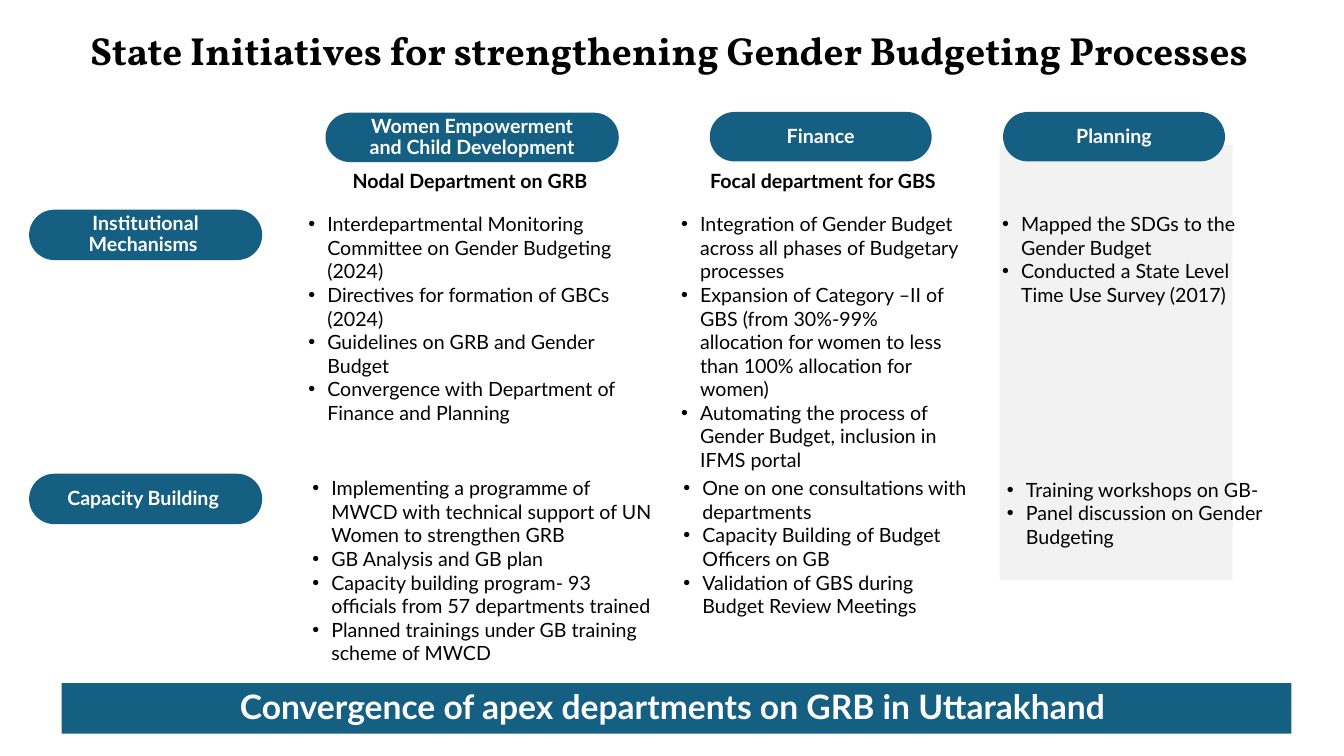
"""Build the slide on state initiatives for gender budgeting."""
import dataclasses
import typing

import lxml.etree
import pptx
import pptx.dml.color
import pptx.enum.shapes
import pptx.enum.text
import pptx.oxml.ns
import pptx.util

Pt = pptx.util.Pt
Shapes = pptx.enum.shapes.MSO_SHAPE
Align = pptx.enum.text.PP_ALIGN
Anchor = pptx.enum.text.MSO_ANCHOR

BLUE, GREY, BLACK, WHITE = "156082", "F2F2F2", "000000", "FFFFFF"
BULLET_INDENT = 13.5


@dataclasses.dataclass(frozen=True)
class Box:
    left: float
    top: float
    width: float
    height: float


@dataclasses.dataclass(frozen=True)
class Block:
    box: Box
    text: str


TITLE = Block(Box(21, 15, 919, 41), "State Initiatives for strengthening Gender Budgeting Processes ")
BANNER = Block(Box(44, 488, 878.5, 36), "Convergence of apex departments on GRB in Uttarakhand ")
PLANNING_PANEL = Box(714, 103.5, 166.5, 310.5)

PILLS = [
    Block(Box(232.5, 80.5, 209.5, 35.3), "Women Empowerment and Child Development"),
    Block(Box(507, 80, 158.5, 35.3), "Finance"),
    Block(Box(716.5, 80, 158.5, 35.3), "Planning"),
    Block(Box(20.8, 149.8, 166.5, 36), "Institutional Mechanisms "),
    Block(Box(20.8, 338.4, 166.5, 36), "Capacity Building "),
]

ROLES = [
    Block(Box(238, 119, 195.5, 18), "Nodal Department on GRB"),
    Block(Box(501, 119, 174, 18), "Focal department for GBS"),
]

PLACEHOLDER_LISTS = [
    Block(Box(216.7, 149.8, 258.5, 171.5),
          "Interdepartmental Monitoring Committee on Gender Budgeting (2024)\n"
          "Directives for formation of GBCs (2024)\n"
          "Guidelines on GRB and Gender Budget\n"
          "Convergence with Department of Finance and Planning"),
    Block(Box(219.6, 338.4, 255.6, 155),
          "Implementing a programme of MWCD with technical support of UN Women to strengthen GRB\n"
          "GB Analysis and GB plan\n"
          "Capacity building program- 93 officials from 57 departments trained\n"
          "Planned trainings under GB training scheme of MWCD"),
    Block(Box(483, 149.8, 209.5, 182),
          "Integration of Gender Budget across all phases of Budgetary processes\n"
          "Expansion of Category –II of GBS (from 30%-99% allocation for women "
          "to less than 100% allocation for women)\n"
          "Automating the process of Gender Budget, inclusion in IFMS portal"),
    Block(Box(484.6, 338.4, 209.5, 119),
          "One on one consultations with departments\n"
          "Capacity Building of Budget Officers on GB\n"
          "Validation of GBS during Budget Review Meetings"),
]

PLANNING_LISTS = [
    Block(Box(712.3, 149.8, 199.5, 157.5),
          "Mapped the SDGs to the Gender Budget\nConducted a State Level Time Use Survey (2017)"),
    Block(Box(715.7, 339.4, 215, 54),
          "Training workshops on GB-\nPanel discussion on Gender Budgeting"),
]


def color(hex_code: str) -> pptx.dml.color.RGBColor:
    return pptx.dml.color.RGBColor.from_string(hex_code)


def add_bullet(paragraph: typing.Any) -> None:
    properties = paragraph._p.get_or_add_pPr()
    properties.set("marL", str(Pt(BULLET_INDENT)))
    properties.set("indent", str(-Pt(BULLET_INDENT)))
    for tag, name, value in (("a:buFont", "typeface", "Arial"), ("a:buChar", "char", "•")):
        lxml.etree.SubElement(properties, pptx.oxml.ns.qn(tag)).set(name, value)


def write_text(shape: typing.Any, text: str, *, size: float = 14, font: str = "Lato",
               hex_code: str = BLACK, bold: bool = False, align: Align = Align.CENTER,
               anchor: Anchor = Anchor.TOP, spacing: float = 1.0,
               side_inset: float = 3.6, top_inset: float = 1.8, bullets: bool = False) -> None:
    frame = shape.text_frame
    frame.text = text
    frame.word_wrap = True
    frame.auto_size = pptx.enum.text.MSO_AUTO_SIZE.NONE
    frame.vertical_anchor = anchor
    frame.margin_left = frame.margin_right = Pt(side_inset)
    frame.margin_top = frame.margin_bottom = Pt(top_inset)
    for paragraph in frame.paragraphs:
        paragraph.alignment = align
        paragraph.line_spacing = spacing
        paragraph.space_before = paragraph.space_after = Pt(0)
        if bullets:
            add_bullet(paragraph)
        for run in paragraph.runs:
            run.font.name = font
            run.font.size = Pt(size)
            run.font.bold = bold
            run.font.color.rgb = color(hex_code)


def place(shape: typing.Any, box: Box) -> None:
    shape.left, shape.top = Pt(box.left), Pt(box.top)
    shape.width, shape.height = Pt(box.width), Pt(box.height)


def add_textbox(slide: typing.Any, box: Box) -> typing.Any:
    return slide.shapes.add_textbox(Pt(box.left), Pt(box.top), Pt(box.width), Pt(box.height))


def add_filled(slide: typing.Any, kind: Shapes, box: Box, fill: str) -> typing.Any:
    shape = slide.shapes.add_shape(kind, Pt(box.left), Pt(box.top), Pt(box.width), Pt(box.height))
    shape.fill.solid()
    shape.fill.fore_color.rgb = color(fill)
    shape.line.fill.background()
    shape.shadow.inherit = False
    return shape


def add_pill(slide: typing.Any, pill: Block) -> None:
    shape = add_filled(slide, Shapes.ROUNDED_RECTANGLE, pill.box, BLUE)
    shape.adjustments[0] = 0.5
    write_text(shape, pill.text, hex_code=WHITE, bold=True, anchor=Anchor.MIDDLE,
               spacing=0.9, side_inset=18)


def write_list(shape: typing.Any, text: str) -> None:
    write_text(shape, text, align=Align.LEFT, bullets=True)


def main() -> None:
    presentation = pptx.Presentation()
    presentation.slide_width, presentation.slide_height = Pt(960), Pt(540)
    slide = presentation.slides.add_slide(presentation.slide_layouts.get_by_name("Comparison"))

    title = slide.shapes.title
    place(title, TITLE.box)
    write_text(title, TITLE.text, size=28, font="Vollkorn", bold=True,
               side_inset=7.2, top_inset=3.6)

    bodies = [shape for shape in slide.placeholders if shape.placeholder_format.idx in range(1, 5)]
    for body, block in zip(bodies, PLACEHOLDER_LISTS):
        place(body, block.box)
        write_list(body, block.text)

    add_filled(slide, Shapes.RECTANGLE, PLANNING_PANEL, GREY)
    for block in PLANNING_LISTS:
        write_list(add_textbox(slide, block.box), block.text)
    for role in ROLES:
        write_text(add_textbox(slide, role.box), role.text, bold=True)
    for pill in PILLS:
        add_pill(slide, pill)

    banner = add_filled(slide, Shapes.RECTANGLE, BANNER.box, BLUE)
    write_text(banner, BANNER.text, size=24, hex_code=WHITE, bold=True,
               anchor=Anchor.MIDDLE, spacing=0.9)
    presentation.save("out.pptx")


if __name__ == "__main__":
    main()
